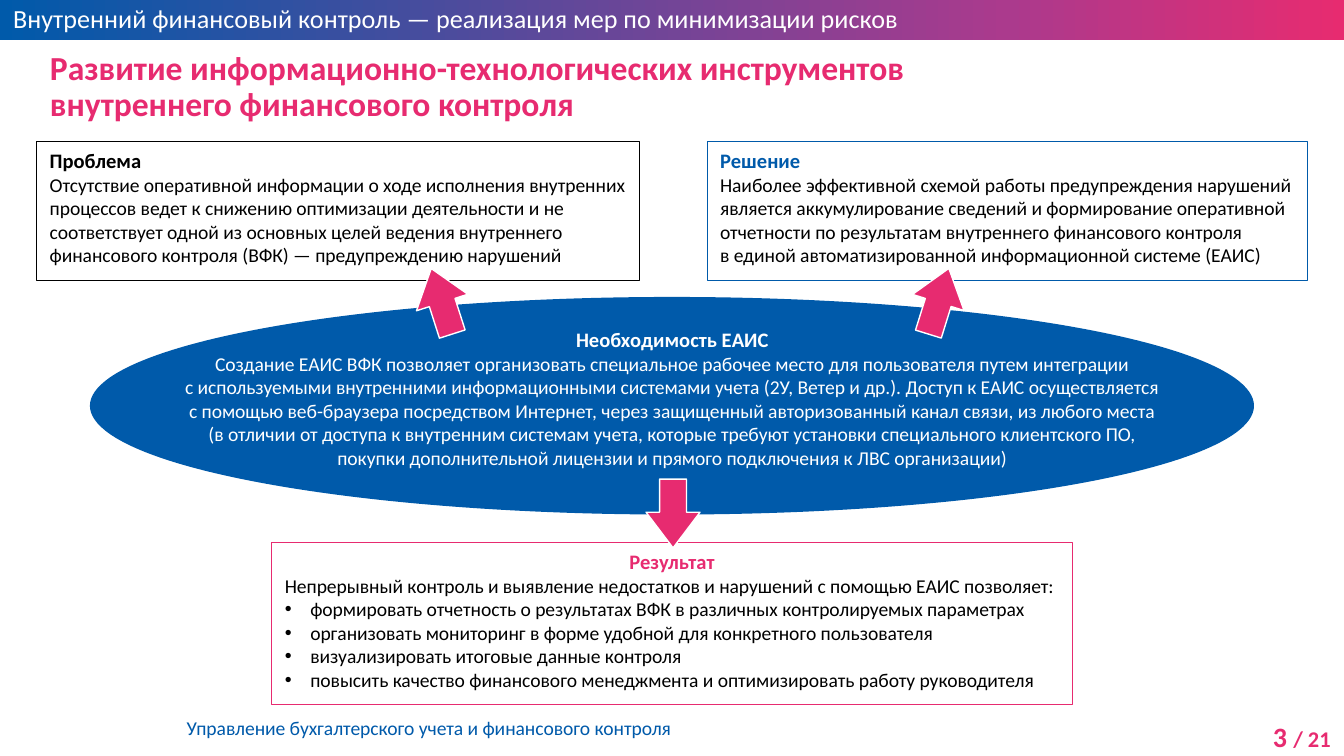
from copy import deepcopy

from lxml.etree import SubElement
from pptx import Presentation
from pptx.dml.color import RGBColor
from pptx.enum.shapes import MSO_SHAPE
from pptx.enum.text import MSO_ANCHOR, MSO_AUTO_SIZE, PP_ALIGN
from pptx.oxml.ns import qn
from pptx.util import Cm, Pt

# Palette and type
BLUE, PINK, PURPLE = "005AAA", "E72B70", "AB3A8D"
BLACK, WHITE = "000000", "FFFFFF"
FONT = "Calibri"
HEADING, BODY = 11, 10.5
LEFT, CENTER, RIGHT = PP_ALIGN.LEFT, PP_ALIGN.CENTER, PP_ALIGN.RIGHT

# Content; places are left, top, width, height in centimetres
HEADER = "Внутренний финансовый контроль — реализация мер по минимизации рисков"
FOOTER = "Управление бухгалтерского учета и финансового контроля"
TITLE = "Развитие информационно-технологических инструментов\nвнутреннего финансового контроля"

CARDS = [
    ((0.69, 2.67, 11.4, 2.62), BLACK, "Проблема",
     "Отсутствие оперативной информации о ходе исполнения внутренних процессов ведет "
     "к снижению оптимизации деятельности и не соответствует одной из основных целей "
     "ведения внутреннего финансового контроля (ВФК) — предупреждению нарушений"),
    ((13.36, 2.67, 11.35, 2.62), BLUE, "Решение",
     "Наиболее эффективной схемой работы предупреждения нарушений является "
     "аккумулирование сведений и формирование оперативной отчетности по результатам "
     "внутреннего финансового контроля\n"
     "в единой автоматизированной информационной системе (ЕАИС)"),
]

NEED_HEADING = "Необходимость ЕАИС"
NEED = (
    "Создание ЕАИС ВФК позволяет организовать специальное рабочее место для пользователя путем интеграции\n"
    "с используемыми внутренними информационными системами учета (2У, Ветер и др.). Доступ к ЕАИС осуществляется\n"
    "с помощью веб-браузера посредством Интернет, через защищенный авторизованный канал связи, из любого места\n"
    "(в отличии от доступа к внутренним системам учета, которые требуют установки специального клиентского ПО,\n"
    "покупки дополнительной лицензии и прямого подключения к ЛВС организации)"
)

RESULT_HEADING = "Результат"
RESULT_INTRO = "Непрерывный контроль и выявление недостатков и нарушений с помощью ЕАИС позволяет:"
RESULTS = [
    "формировать отчетность о результатах ВФК в различных контролируемых параметрах",
    "организовать мониторинг в форме удобной для конкретного пользователя",
    "визуализировать итоговые данные контроля",
    "повысить качество финансового менеджмента и оптимизировать работу руководителя",
]

ARROW_SIZE = (1.3, 1.02)
ARROWS = [(7.7, 5.18, 252.2), (17.09, 5.18, 287.3), (12.07, 9.19, 90)]  # left, top, rotation


def color(value):
    return RGBColor.from_string(value)


def place(shape, box):
    shape.left, shape.top, shape.width, shape.height = (Cm(length) for length in box)


def paint(shape, fill=None, line=None, line_width=0.25):
    if fill:
        shape.fill.solid()
        shape.fill.fore_color.rgb = color(fill)
    else:
        shape.fill.background()
    if line:
        shape.line.color.rgb = color(line)
        shape.line.width = Pt(line_width)
    else:
        shape.line.fill.background()


def add_shape(kind, box, **style):
    shape = slide.shapes.add_shape(kind, *(Cm(length) for length in box))
    shape.shadow.inherit = False
    paint(shape, **style)
    return shape


def set_bullet(paragraph, bullet):
    properties = paragraph._p.get_or_add_pPr()
    indent = Cm(0.48) if bullet else 0
    properties.set("marL", str(indent))
    properties.set("indent", str(-indent))
    if bullet:
        SubElement(properties, qn("a:buFont"), typeface="Arial")
        SubElement(properties, qn("a:buChar"), char="•")
    else:
        SubElement(properties, qn("a:buNone"))


def write(shape, paragraphs, wrap=True):
    """Each paragraph is (alignment, bullet, [(text, size, color, bold), ...])."""
    frame = shape.text_frame
    frame.word_wrap = wrap
    frame.auto_size = MSO_AUTO_SIZE.NONE
    frame.vertical_anchor = MSO_ANCHOR.TOP
    for index, (alignment, bullet, runs) in enumerate(paragraphs):
        paragraph = frame.add_paragraph() if index else frame.paragraphs[0]
        paragraph.alignment = alignment
        paragraph.space_before = Pt(0)
        set_bullet(paragraph, bullet)
        for text, size, text_color, bold in runs:
            for number, line in enumerate(text.split("\n")):
                if number:
                    paragraph.add_line_break()
                run = paragraph.add_run()
                run.text = line
                run.font.name = FONT
                run.font.size = Pt(size)
                run.font.bold = bold
                run.font.color.rgb = color(text_color)


def add_text(box, paragraphs, wrap=True):
    write(slide.shapes.add_textbox(*(Cm(length) for length in box)), paragraphs, wrap)


presentation = Presentation()
presentation.slide_width, presentation.slide_height = Cm(25.4), Cm(14.28)
slide = presentation.slides.add_slide(presentation.slide_layouts[1])
title, result = slide.placeholders

# Header band with a three-stop gradient
band = add_shape(MSO_SHAPE.RECTANGLE, (0, 0, 25.4, 0.76))
band.fill.gradient()
band.fill.gradient_angle = 0
first_stop = band.fill._fill._gradFill.gsLst[0]
first_stop.addnext(deepcopy(first_stop))
for stop, (position, stop_color) in zip(
        band.fill.gradient_stops, [(0, BLUE), (0.75, PURPLE), (1, PINK)]):
    stop.position = position
    stop.color.rgb = color(stop_color)
add_text((0, -0.08, 25.4, 0.86), [(LEFT, False, [(HEADER, 14, WHITE, False)])])

# Footer and page number
add_text((3.28, 13.39, 9.75, 0.71), [(LEFT, False, [(FOOTER, BODY, BLUE, False)])], wrap=False)
add_text((23.11, 13.46, 2.29, 0.89),
         [(RIGHT, False, [("3 ", 15, PINK, True), ("/ 21", 12, PINK, True)])])

# Title
place(title, (0.69, 0.84, 24, 1.8))
write(title, [(LEFT, False, [(TITLE, 18, PINK, True)])])
title.text_frame.paragraphs[0].line_spacing = 0.9

# Problem and solution cards
for box, accent, heading, text in CARDS:
    card = add_shape(MSO_SHAPE.RECTANGLE, box, line=accent)
    write(card, [(LEFT, False, [(heading, HEADING, accent, True)]),
                 (LEFT, False, [(text, BODY, BLACK, False)])])

# Central ellipse
add_shape(MSO_SHAPE.OVAL, (1.7, 5.61, 22, 4.11), fill=BLUE)
add_text((2.41, 6.05, 20.6, 2.97),
         [(CENTER, False, [(NEED_HEADING, HEADING, WHITE, True)]),
          (CENTER, False, [(NEED, BODY, WHITE, False)])])

# Result list
place(result, (5.13, 10.24, 15.14, 3.07))
paint(result, fill=WHITE, line=PINK)
write(result,
      [(CENTER, False, [(RESULT_HEADING, HEADING, PINK, True)]),
       (LEFT, False, [(RESULT_INTRO, BODY, BLACK, False)])]
      + [(LEFT, True, [(item, BODY, BLACK, False)]) for item in RESULTS])

# Arrows from the ellipse to the boxes
for left, top, rotation in ARROWS:
    arrow = add_shape(MSO_SHAPE.RIGHT_ARROW, (left, top, *ARROW_SIZE),
                      fill=PINK, line=WHITE, line_width=0.75)
    arrow.adjustments[0], arrow.adjustments[1] = 0.5, 0.66
    arrow.rotation = rotation

presentation.save("out.pptx")
